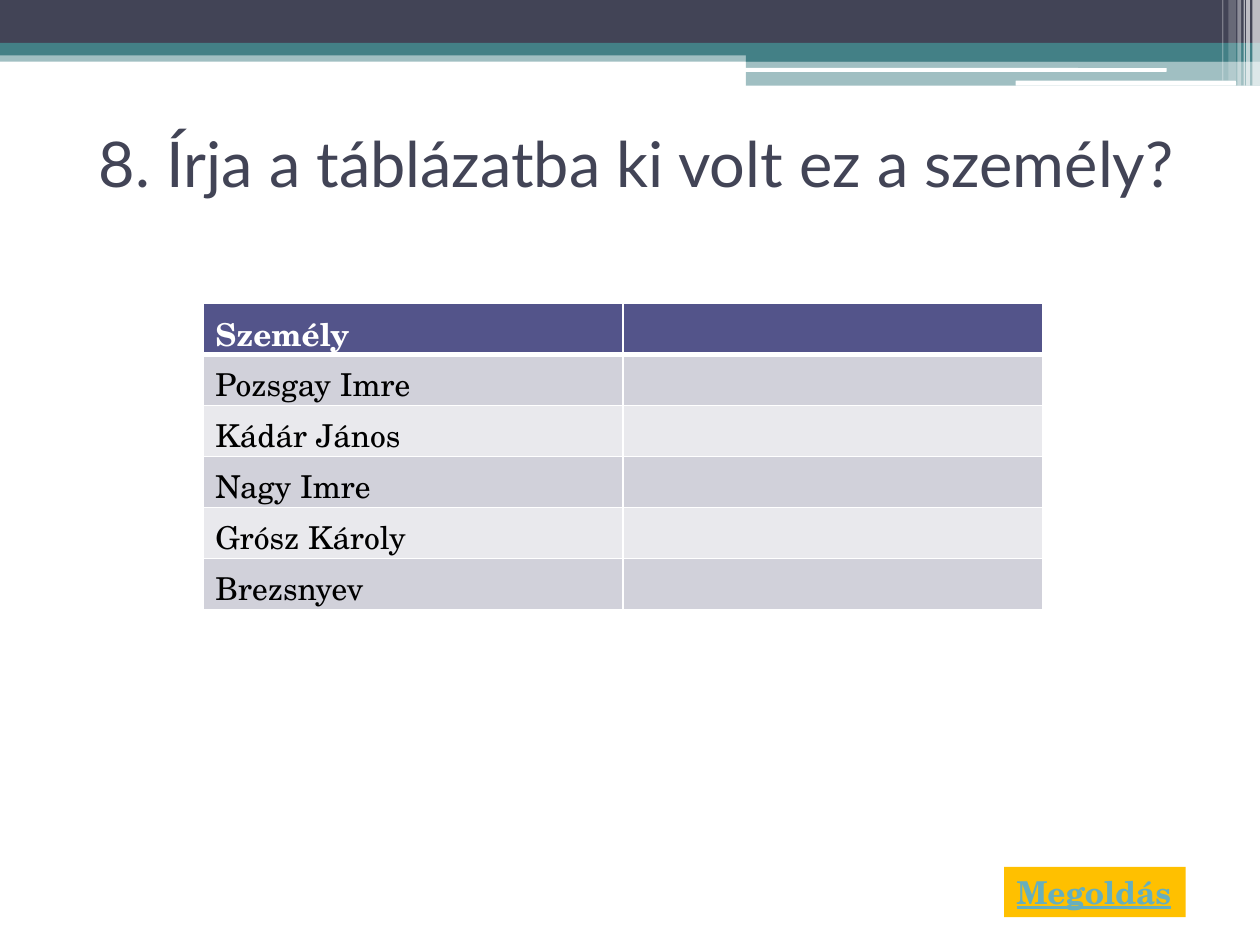
from typing import NamedTuple

from lxml import etree
from pptx import Presentation
from pptx.dml.color import RGBColor
from pptx.enum.shapes import MSO_SHAPE
from pptx.enum.text import MSO_ANCHOR, MSO_AUTO_SIZE, PP_ALIGN
from pptx.oxml.ns import qn
from pptx.util import Inches, Pt

RECTANGLE = MSO_SHAPE.RECTANGLE
ROUNDED = MSO_SHAPE.ROUNDED_RECTANGLE
MIDDLE = MSO_ANCHOR.MIDDLE
CENTER = PP_ALIGN.CENTER
GROW = MSO_AUTO_SIZE.SHAPE_TO_FIT_TEXT

WHITE = RGBColor(0xFF, 0xFF, 0xFF)
BLACK = RGBColor(0x00, 0x00, 0x00)
SLATE = RGBColor(0x42, 0x44, 0x56)
TEAL = RGBColor(0x43, 0x80, 0x86)
INDIGO = RGBColor(0x53, 0x54, 0x8A)
DARK_BAND = RGBColor(0xD1, 0xD1, 0xDA)
LIGHT_BAND = RGBColor(0xE9, 0xE9, 0xED)
AMBER = RGBColor(0xFF, 0xC0, 0x00)
LINK_BLUE = RGBColor(0x67, 0xAF, 0xBD)

TITLE_FONT = "Lato"
BODY_FONT = "TeX Gyre Schola"
SLIDE_WIDTH, SLIDE_HEIGHT = Inches(10), Inches(7.5)
GRID_COLUMNS, GRID_ROWS = 100, 75
TITLE_ONLY = 5


class Area(NamedTuple):
    column: float
    row: float
    columns: float
    rows: float

    def lengths(self) -> tuple[int, int, int, int]:
        across, down = SLIDE_WIDTH / GRID_COLUMNS, SLIDE_HEIGHT / GRID_ROWS
        return (round(self.column * across), round(self.row * down),
                round(self.columns * across), round(self.rows * down))


class Bar(NamedTuple):
    area: Area
    color: RGBColor
    opacity: int = 100
    kind: MSO_SHAPE = RECTANGLE


class Stripe(NamedTuple):
    column: float
    columns: float
    rows: float
    opacity: int


BARS = [
    Bar(Area(0, 4, 100, 0.9), TEAL, 50),
    Bar(Area(0, 0, 100, 3.4), SLATE),
    Bar(Area(0, 3.4, 100, 1), TEAL),
    Bar(Area(59.2, 3.9, 40.8, 1), TEAL),
    Bar(Area(59.2, 4.8, 40.8, 2), TEAL, 50),
    Bar(Area(59.1, 5.4, 33.5, 0.3), WHITE, kind=ROUNDED),
    Bar(Area(80.6, 6.4, 17.5, 0.4), WHITE, kind=ROUNDED),
]
STRIPES = [
    Stripe(99.4, 0.6, 6.8, 65),
    Stripe(98.9, 0.3, 6.8, 65),
    Stripe(98.7, 0.1, 6.8, 60),
    Stripe(98.2, 0.3, 6.8, 40),
    Stripe(97.5, 0.6, 6.4, 20),
    Stripe(97, 0.1, 6.4, 30),
]
TITLE = "8. Írja a táblázatba ki volt ez a személy?"
TITLE_AREA = Area(5.5, 7, 90, 11.7)
PEOPLE = ["Személy", "Pozsgay Imre", "Kádár János", "Nagy Imre", "Grósz Károly", "Brezsnyev"]
TABLE_AREA = Area(16.1, 24.1, 66.7, 24.3)
BUTTON_AREA = Area(79.7, 68.8, 14.4, 4)


def format_text(paragraph, font_name: str, size: int, color: RGBColor, bold: bool = False) -> None:
    for run in paragraph.runs:
        run.font.name = font_name
        run.font.size = Pt(size)
        run.font.color.rgb = color
        run.font.bold = bold


def add_line(parent, tag: str, points: float, position: int):
    line = etree.Element(qn(tag), w=str(Pt(points)))
    fill = etree.SubElement(line, qn("a:solidFill"))
    etree.SubElement(fill, qn("a:srgbClr"), val=str(WHITE))
    parent.insert(position, line)


def add_bar(slide, bar: Bar):
    shape = slide.shapes.add_shape(bar.kind, *bar.area.lengths())
    shape.shadow.inherit = False
    shape.line.fill.background()
    shape.fill.solid()
    shape.fill.fore_color.rgb = bar.color
    if bar.opacity < 100:
        color = shape.fill._xPr.find(".//" + qn("a:srgbClr"))
        etree.SubElement(color, qn("a:alpha"), val=str(bar.opacity * 1000))
    return shape


def add_title(slide) -> None:
    title = slide.shapes.title
    title.left, title.top, title.width, title.height = TITLE_AREA.lengths()
    title.text_frame.text = TITLE
    title.text_frame.vertical_anchor = MIDDLE
    paragraph = title.text_frame.paragraphs[0]
    paragraph.alignment = CENTER
    format_text(paragraph, TITLE_FONT, 36, SLATE)


def add_button(slide) -> None:
    text_frame = add_bar(slide, Bar(BUTTON_AREA, AMBER)).text_frame
    text_frame.text = "Megoldás"
    text_frame.word_wrap = False
    text_frame.auto_size = GROW
    paragraph = text_frame.paragraphs[0]
    paragraph.alignment = PP_ALIGN.LEFT
    format_text(paragraph, BODY_FONT, 18, LINK_BLUE, bold=True)
    run = paragraph.runs[0]
    run.font.underline = True
    add_line(run._r.get_or_add_rPr(), "a:ln", 1.4, 0)


def format_cell(cell, row: int) -> None:
    header = row == 0
    widths = {"a:lnL": 1, "a:lnR": 1, "a:lnT": 3 if row == 1 else 1, "a:lnB": 3 if header else 1}
    properties = cell._tc.get_or_add_tcPr()
    for position, (tag, points) in enumerate(widths.items()):
        add_line(properties, tag, points, position)
    cell.fill.solid()
    cell.fill.fore_color.rgb = INDIGO if header else DARK_BAND if row % 2 else LIGHT_BAND
    format_text(cell.text_frame.paragraphs[0], BODY_FONT, 18, WHITE if header else BLACK, header)


def add_people_table(slide) -> None:
    table = slide.shapes.add_table(len(PEOPLE), 2, *TABLE_AREA.lengths()).table
    for row, person in enumerate(PEOPLE):
        table.cell(row, 0).text_frame.text = person
        for cell in table.rows[row].cells:
            format_cell(cell, row)


def main() -> None:
    presentation = Presentation()
    presentation.slide_width, presentation.slide_height = SLIDE_WIDTH, SLIDE_HEIGHT
    slide = presentation.slides.add_slide(presentation.slide_layouts[TITLE_ONLY])
    for bar in BARS:
        add_bar(slide, bar)
    for stripe in STRIPES:
        add_bar(slide, Bar(Area(stripe.column, 0, stripe.columns, stripe.rows), WHITE, stripe.opacity))
    add_title(slide)
    add_button(slide)
    add_people_table(slide)
    presentation.save("out.pptx")


if __name__ == "__main__":
    main()
